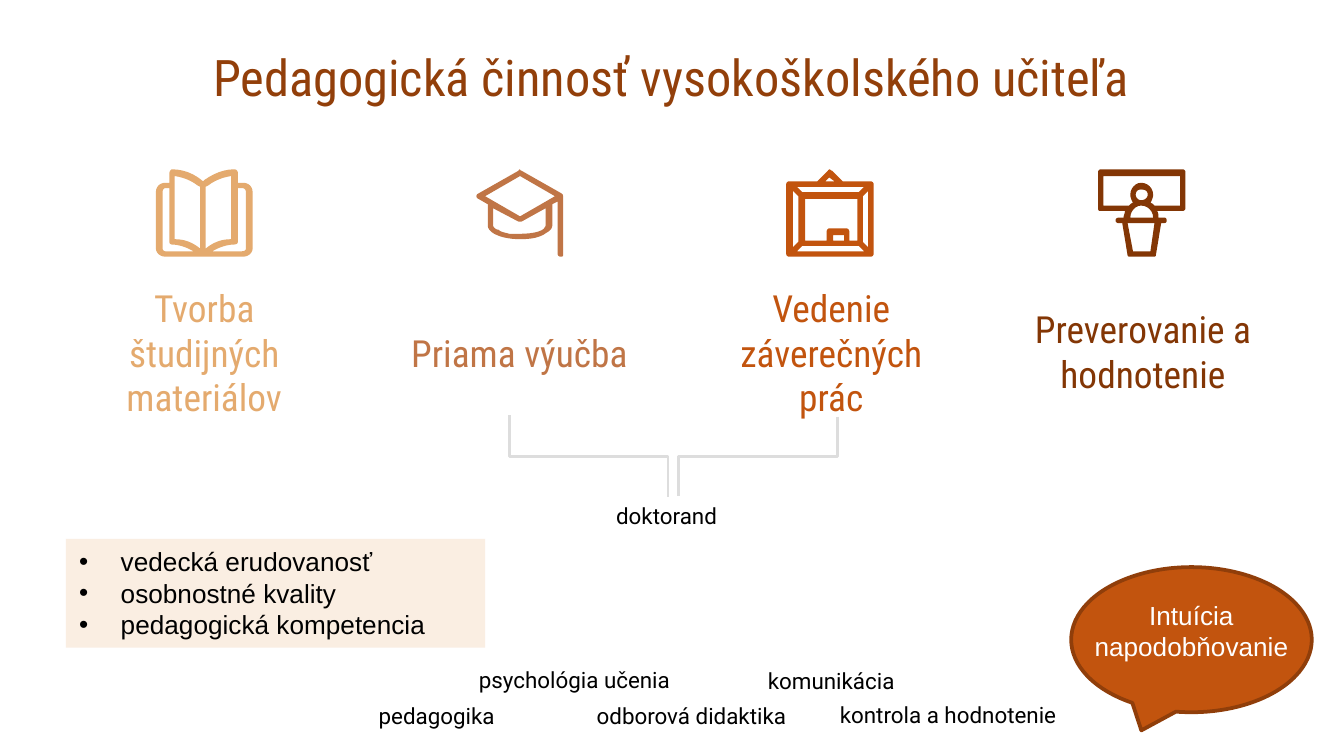
from dataclasses import dataclass

from lxml import etree
from pptx import Presentation
from pptx import util as u
from pptx.dml.color import RGBColor
from pptx.enum import shapes, text
from pptx.oxml.ns import qn


@dataclass(frozen=True)
class Theme:
    heading_font: str = "Roboto Condensed"
    label_font: str = "Roboto"
    body_font: str = "Arial"
    title_size: int = 27
    heading_size: int = 20
    body_size: int = 14
    label_size: int = 12
    title: str = "923F0A"
    sand: str = "E4AA6E"
    copper: str = "C07546"
    orange: str = "C2540E"
    brown: str = "833605"
    outline: str = "903E0A"
    panel: str = "FAEEE2"
    connector: str = "DDDDDD"
    black: str = "000000"
    white: str = "FFFFFF"


THEME = Theme()

# Icon outlines: M move, L lines, C cubic curves, Z close; hundredths of an inch
BOOK = """M 14 5 C 20 6 26 8 31 12 L 33 13 33 59 C 27 54 21 52 14 52 Z
M 56 5 L 56 52 C 49 52 43 54 37 59 L 37 13 39 12 C 44 8 50 6 56 5 Z
M 10 14 L 10 54 C 10 55 11 56 12 56 17 56 23 58 28 61 L 7 61 C 6 61 5 60 5 59
L 5 17 C 5 15 6 14 7 14 Z
M 64 14 C 66 14 67 15 67 17 L 67 59 C 67 60 66 61 64 61 L 42 61
C 47 58 53 56 58 56 60 56 61 55 61 54 L 61 14 Z
M 12 0 C 11 0 10 2 10 3 L 10 10 7 10 C 3 10 0 13 0 17 L 0 59 C 0 62 3 65 7 65
L 65 65 C 69 65 72 62 72 59 L 72 17 C 72 13 69 10 65 10 L 61 10 61 3
C 61 1 60 0 58 0 51 0 43 3 36 8 L 35 9 34 8 C 28 3 20 0 12 0 Z"""
CAP = """M 33 5 L 59 20 33 35 7 20 Z
M 52 29 L 52 42 C 52 43 51 43 51 44 48 47 40 48 33 48 30 48 27 48 25 48
22 47 19 47 17 45 15 45 13 43 13 42 L 13 29 32 39 33 39 34 39 Z
M 33 0 C 32 0 32 1 32 1 L 2 18 C 0 19 0 21 2 22 L 9 26 9 42
C 9 45 13 48 16 49 20 51 27 52 33 52 41 52 48 51 53 47 55 46 57 44 57 42
L 57 26 61 24 61 63 C 61 64 62 65 63 65 64 65 65 65 65 64 L 65 20
C 65 19 65 19 64 18 L 34 1 C 33 1 33 0 33 0 Z"""
BOARD = """M 32 6 L 36 9 29 9 Z
M 58 13 L 54 17 12 17 8 13 Z
M 43 49 L 43 53 35 53 35 49 Z
M 53 22 L 53 53 47 53 47 47 C 47 45 46 44 45 44 L 32 44 C 31 44 30 45 30 47
L 30 53 14 53 14 22 Z
M 5 16 L 9 20 9 54 5 58 Z
M 61 16 L 61 58 57 54 57 20 Z
M 54 57 L 58 61 8 61 12 57 Z
M 32 0 C 32 0 31 1 31 1 L 23 9 2 9 C 1 9 0 10 0 11 L 0 63 C 0 64 1 65 2 65
L 63 65 C 64 65 65 64 65 63 L 65 11 C 65 10 64 9 63 9 L 42 9 34 1
C 33 1 33 0 32 0 Z"""
LECTERN = """M 32 15 C 35 15 37 16 37 19 37 21 35 23 32 23 30 23 28 21 28 19
28 16 30 15 32 15 Z
M 61 5 L 61 27 42 27 C 41 26 40 25 39 25 40 23 41 21 41 19 41 14 37 10 32 10
28 10 24 14 24 19 24 21 25 23 26 25 25 25 24 26 23 27 L 4 27 4 5 Z
M 32 27 C 37 27 41 31 41 36 L 24 36 C 24 31 28 27 32 27 Z
M 42 40 L 39 61 26 61 22 40 Z
M 2 0 C 1 0 0 1 0 2 L 0 29 C 0 31 1 31 2 31 L 20 31 C 20 33 19 34 19 36
L 15 36 C 14 36 13 37 13 38 13 39 14 40 15 40 L 18 40 22 64
C 22 65 23 65 24 65 L 41 65 C 42 65 43 65 43 64 L 47 40 49 40
C 51 40 51 39 51 38 51 36 50 36 49 36 L 45 36 C 45 34 45 33 44 31 L 63 31
C 64 31 65 30 65 29 L 65 2 C 65 1 64 0 63 0 Z"""


def trace(outline, steps=6):
    """Turn an outline into a list of closed contours made of points."""
    contours, pairs, command = [], [], ""
    for token in outline.split():
        if token.isalpha():
            command, pairs = token, []
            if command == "M":
                contours.append([])
            continue
        pairs.append(float(token))
        points = contours[-1]
        if command in "ML" and len(pairs) == 2:
            points.append(tuple(pairs))
            pairs = []
        elif command == "C" and len(pairs) == 6:
            a, (b, c, d) = points[-1], zip(pairs[::2], pairs[1::2])
            for step in range(1, steps + 1):
                t = step / steps
                s = 1 - t
                points.append(tuple(
                    s**3 * a[i] + 3 * s * s * t * b[i] + 3 * s * t * t * c[i] + t**3 * d[i]
                    for i in (0, 1)))
            pairs = []
    return contours


def write_text(shape, lines, *, font, size, color, align=text.PP_ALIGN.CENTER,
               anchor=text.MSO_ANCHOR.MIDDLE, bullet=None):
    frame = shape.text_frame
    frame.word_wrap = True
    frame.vertical_anchor = anchor
    for index, line in enumerate(lines):
        paragraph = frame.add_paragraph() if index else frame.paragraphs[0]
        paragraph.alignment = align
        run = paragraph.add_run()
        run.text = line
        run.font.name, run.font.size = font, u.Pt(size)
        run.font.color.rgb = RGBColor.from_string(color)
        if bullet:
            properties = paragraph._p.get_or_add_pPr()
            properties.set("marL", str(u.Inches(0.31)))
            properties.set("indent", str(-u.Inches(0.31)))
            etree.SubElement(properties, qn("a:buFont")).set("typeface", font)
            etree.SubElement(properties, qn("a:buChar")).set("char", bullet)


class SlideBuilder:
    def __init__(self, slide, theme):
        self.shapes, self.theme = slide.shapes, theme

    def paint(self, shape, fill, line=None, width=2):
        shape.shadow.inherit = False
        shape.fill.solid()
        shape.fill.fore_color.rgb = RGBColor.from_string(fill)
        if line:
            shape.line.color.rgb = RGBColor.from_string(line)
            shape.line.width = u.Pt(width)
        else:
            shape.line.fill.background()

    def text_box(self, box, *lines, **style):
        shape = self.shapes.add_textbox(*map(u.Inches, box))
        write_text(shape, lines, **style)

    def heading(self, box, line, color, size):
        self.text_box(box, line, font=self.theme.heading_font, size=size, color=color)

    def label(self, box, line):
        self.text_box(box, line, font=self.theme.label_font,
                      size=self.theme.label_size, color=self.theme.black)

    def shape(self, kind, box, fill, line=None):
        shape = self.shapes.add_shape(kind, *map(u.Inches, box))
        self.paint(shape, fill, line)
        return shape

    def icon(self, left, top, outline, color):
        contours = [[(u.Inches(left + x / 100), u.Inches(top + y / 100)) for x, y in contour]
                    for contour in trace(outline)]
        builder = self.shapes.build_freeform(*contours[0][0])
        for index, contour in enumerate(contours):
            if index:
                builder.move_to(*contour[0])
            builder.add_line_segments(contour[1:], close=True)
        self.paint(builder.convert_to_shape(), color)

    def elbow_down(self, x1, y1, x2, y2):
        """Elbow that leaves downwards: a horizontal elbow turned a quarter."""
        side = 1 if x2 > x1 else -1
        middle_x, middle_y = (x1 + x2) / 2, (y1 + y2) / 2
        half_width, half_height = (y2 - y1) / 2, abs(x2 - x1) / 2
        line = self.shapes.add_connector(
            shapes.MSO_CONNECTOR.ELBOW,
            u.Inches(middle_x + side * half_width), u.Inches(middle_y - half_height),
            u.Inches(middle_x - side * half_width), u.Inches(middle_y + half_height))
        line.rotation = 270 if side > 0 else 90
        line.line.color.rgb = RGBColor.from_string(self.theme.connector)
        line.line.width = u.Pt(1.5)
        etree.SubElement(line._element.spPr, qn("a:effectLst"))


def main():
    presentation = Presentation()
    presentation.slide_width = u.Inches(10)
    presentation.slide_height = u.Inches(10 * 9 / 16)
    slide = SlideBuilder(presentation.slides.add_slide(presentation.slide_layouts[6]), THEME)

    # Title
    slide.heading((0.49, 0.45, 9.01, 0.24), "Pedagogická činnosť vysokoškolského učiteľa",
                  THEME.title, THEME.title_size)

    # Four activities, each with an icon
    activities = [
        (0.54, 2.13, 1.96, "Tvorba študijných materiálov", 1.16, BOOK, THEME.sand),
        (2.91, 2.13, 1.91, "Priama výučba", 3.54, CAP, THEME.copper),
        (5.23, 2.13, 1.91, "Vedenie záverečných prác", 5.85, BOARD, THEME.orange),
        (7.55, 2.12, 1.91, "Preverovanie a hodnotenie", 8.17, LECTERN, THEME.brown),
    ]
    for left, top, width, name, icon_left, outline, color in activities:
        slide.heading((left, top, width, 0.98), name, color, THEME.heading_size)
        slide.icon(icon_left, 1.26, outline, color)

    # Doctoral student, joined to two activities
    slide.elbow_down(3.79, 3.09, 4.97, 3.7)
    slide.elbow_down(6.23, 3.1, 5.05, 3.69)
    slide.label((3.68, 3.67, 2.56, 0.33), "doktorand")

    # Fields of pedagogical competence
    slide.label((3.32, 4.89, 1.91, 0.33), "psychológia učenia")
    slide.label((5.23, 4.85, 1.91, 0.42), "komunikácia")
    slide.label((2.27, 5.16, 1.96, 0.33), "pedagogika")
    slide.label((4.19, 5.18, 1.91, 0.29), "odborová didaktika")
    slide.label((6.12, 5.08, 1.91, 0.48), "kontrola a hodnotenie ")

    # Speech bubble
    body = {"font": THEME.body_font, "size": THEME.body_size, "anchor": text.MSO_ANCHOR.TOP}
    slide.shape(shapes.MSO_SHAPE.OVAL_CALLOUT, (7.97, 4.22, 1.79, 1.08),
                THEME.orange, THEME.outline)
    slide.text_box((8.03, 4.41, 1.67, 0.57), "Intuícia", "napodobňovanie",
                   color=THEME.white, **body)

    # Required qualities
    panel = slide.shape(shapes.MSO_SHAPE.RECTANGLE, (0.49, 4.01, 3.12, 0.81), THEME.panel)
    write_text(panel, ["vedecká erudovanosť", "osobnostné kvality", "pedagogická kompetencia"],
               color=THEME.black, align=text.PP_ALIGN.LEFT, bullet="•", **body)

    presentation.save("out.pptx")


if __name__ == "__main__":
    main()
